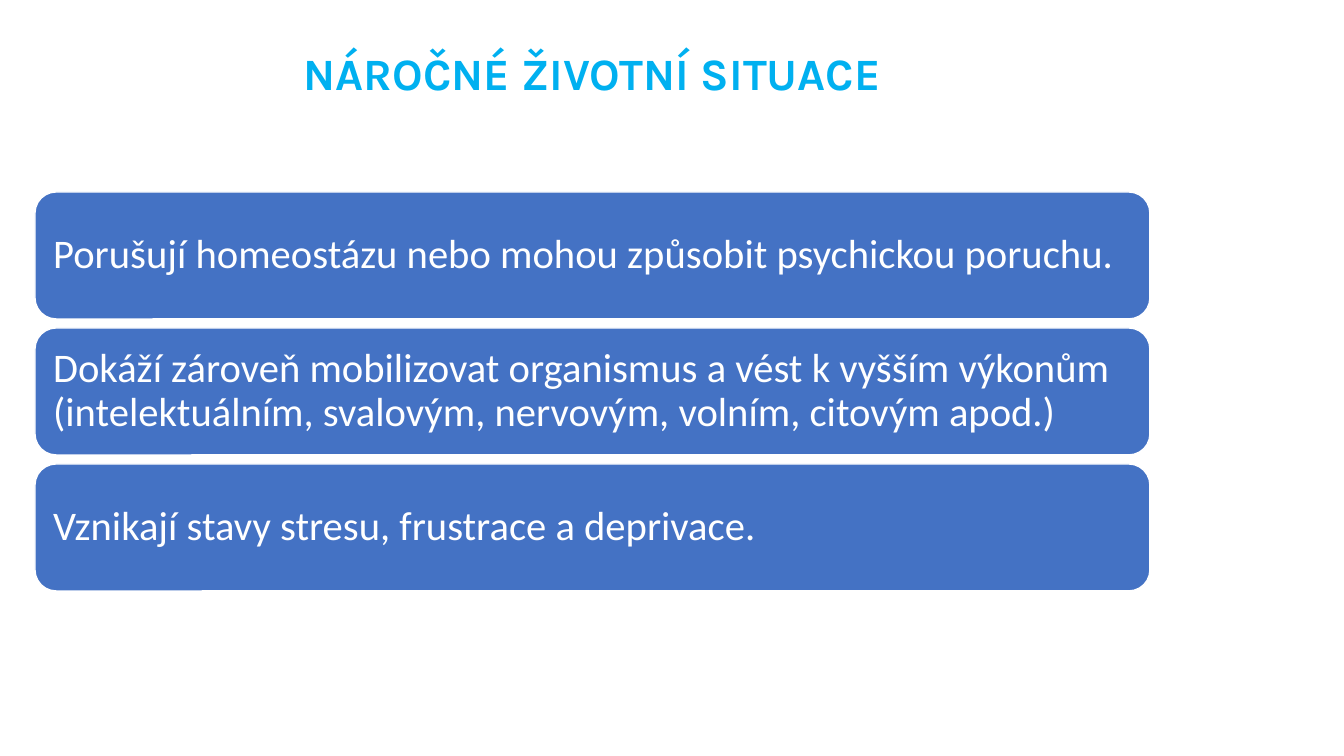
"""Build a slide on demanding life situations: a title above three stacked bars."""
from pptx import Presentation
from pptx.dml.color import RGBColor
from pptx.enum.shapes import MSO_SHAPE
from pptx.enum.text import MSO_ANCHOR, MSO_AUTO_SIZE, PP_ALIGN
from pptx.util import Emu, Pt


def px(count):
    return Emu(round(count * 914400 / 100.8))


def style(frame, face, size, color, bold, align):
    frame.word_wrap = True
    frame.auto_size = MSO_AUTO_SIZE.NONE
    frame.vertical_anchor = MSO_ANCHOR.MIDDLE
    para = frame.paragraphs[0]
    para.alignment = align
    para.line_spacing = 0.9
    font = para.runs[0].font
    font.name = face
    font.size = Pt(size)
    font.bold = bold
    font.color.rgb = RGBColor.from_string(color)


deck = Presentation()
deck.slide_width, deck.slide_height = px(1344), px(756)
slide = deck.slides.add_slide(deck.slide_layouts[5])

LEFT, WIDTH = 35, 1115
title = slide.shapes.title
title.left, title.top = px(LEFT), px(40)
title.width, title.height = px(WIDTH), px(72)
title.text_frame.text = "NÁROČNÉ ŽIVOTNÍ SITUACE"
style(title.text_frame, "Karla", 32, "00B0F0", True, PP_ALIGN.CENTER)

points = [
    "Porušují homeostázu nebo mohou způsobit psychickou poruchu.",
    "Dokáží zároveň mobilizovat organismus a vést k vyšším výkonům "
    "(intelektuálním, svalovým, nervovým, volním, citovým apod.)",
    "Vznikají stavy stresu, frustrace a deprivace.",
]
TOP, HEIGHT, STEP = 192, 127, 136
for row, point in enumerate(points):
    bar = slide.shapes.add_shape(
        MSO_SHAPE.ROUNDED_RECTANGLE,
        px(LEFT), px(TOP + row * STEP), px(WIDTH), px(HEIGHT))
    bar.shadow.inherit = False
    bar.fill.solid()
    bar.fill.fore_color.rgb = RGBColor.from_string("4472C4")
    bar.line.color.rgb = RGBColor.from_string("FFFFFF")
    bar.line.width = Pt(1)
    frame = bar.text_frame
    frame.margin_left = frame.margin_right = px(12)
    frame.margin_top = frame.margin_bottom = px(12)
    frame.text = point
    style(frame, "Calibri", 29, "FFFFFF", False, PP_ALIGN.LEFT)

deck.save("out.pptx")
